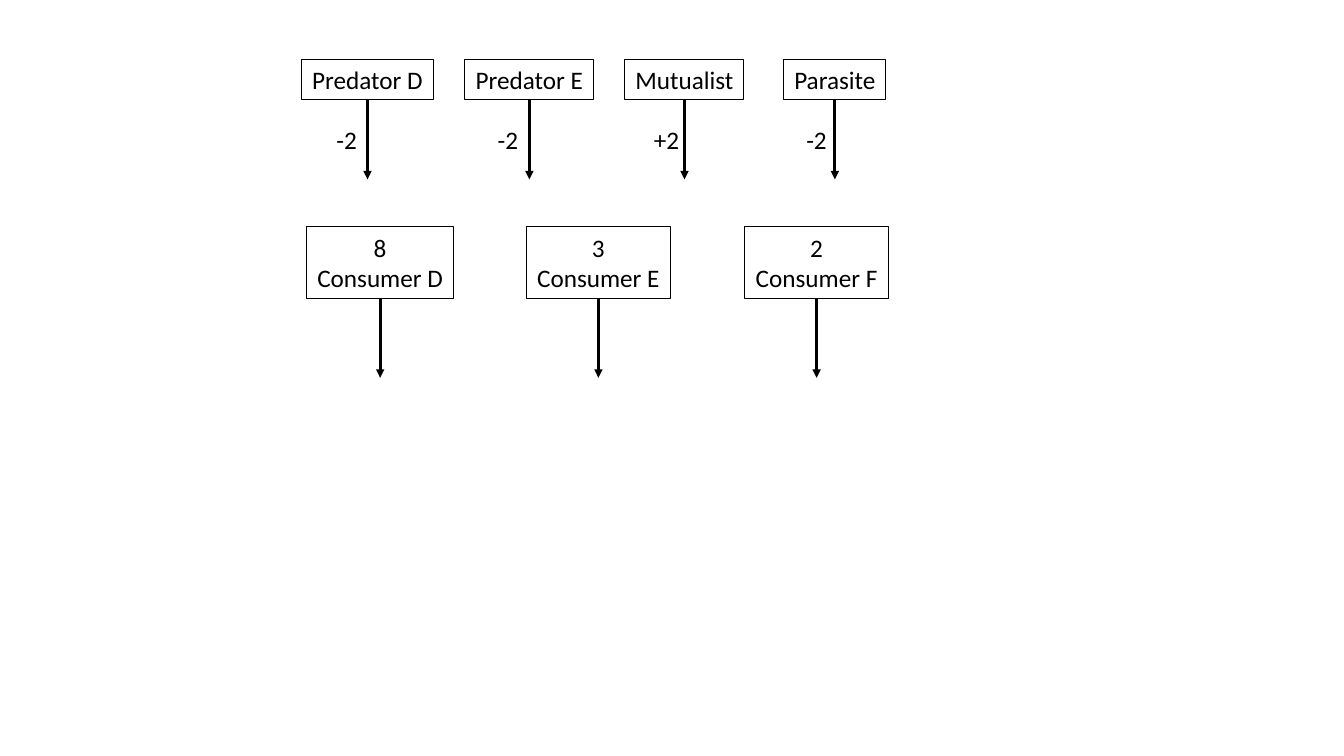
from pptx import Presentation, util as u
from pptx.dml.color import RGBColor
from pptx.enum import shapes, text
from pptx.oxml.ns import qn
from lxml import etree

COLORS = {"ink": "000000"}
CONSUMERS = [("D", 8, 3.71), ("E", 3, 3.63), ("F", 2, 3.61)]
INFLUENCES = [
    ("Predator D", 9.26, 3.33, "-2", 8.23, 1.04),
    ("Predator E", 13.34, 3.25, "-2", 12.29, 1.04),
    ("Mutualist", 17.25, 3.0, "+2", 16.23, 1.17),
    ("Parasite", 21.04, 2.57, "-2", 20.07, 1.04),
]


class FoodWeb:
    font = "Calibri"
    size = u.Pt(18)
    ink = RGBColor.from_string(COLORS["ink"])
    arrow_length = u.Cm(2)

    def __init__(self, slide):
        self.slide = slide

    def set_text(self, sp, lines, align):
        tf = sp.text_frame
        tf.word_wrap = False
        tf.auto_size = text.MSO_AUTO_SIZE.SHAPE_TO_FIT_TEXT
        tf.vertical_anchor = text.MSO_ANCHOR.TOP
        tf.text = "\n".join(lines)
        for p in tf.paragraphs:
            p.alignment = align
            p.font.name = self.font
            p.font.size = self.size
            p.font.color.rgb = self.ink

    def box(self, center, top, width, height, *lines):
        sp = self.slide.shapes.add_shape(
            shapes.MSO_SHAPE.RECTANGLE,
            u.Cm(center - width / 2), u.Cm(top), u.Cm(width), u.Cm(height))
        sp.shadow.inherit = False
        sp.fill.background()
        sp.line.color.rgb = self.ink
        sp.line.width = u.Pt(0.75)
        self.set_text(sp, lines, text.PP_ALIGN.CENTER)
        return sp

    def arrow_below(self, sp):
        x, y = sp.left + sp.width // 2, sp.top + sp.height
        arrow = self.slide.shapes.add_connector(
            shapes.MSO_CONNECTOR.STRAIGHT, x, y, x, y + self.arrow_length)
        arrow.begin_connect(sp, 2)
        arrow.line.color.rgb = self.ink
        arrow.line.width = u.Pt(2)
        props = arrow._element.spPr
        etree.SubElement(props.find(qn("a:ln")), qn("a:tailEnd"), type="triangle")
        etree.SubElement(props, qn("a:effectLst"))

    def label(self, left, top, width, height, wording):
        sp = self.slide.shapes.add_textbox(
            u.Cm(left), u.Cm(top), u.Cm(width), u.Cm(height))
        self.set_text(sp, [wording], text.PP_ALIGN.LEFT)


def main():
    prs = Presentation()
    prs.slide_width, prs.slide_height = u.Cm(33.87), u.Cm(19.05)
    web = FoodWeb(prs.slides.add_slide(prs.slide_layouts[6]))

    for i, (letter, count, width) in enumerate(CONSUMERS):
        sp = web.box(9.58 + 5.5 * i, 5.72, width, 1.8, str(count), f"Consumer {letter}")
        web.arrow_below(sp)

    for name, center, width, effect, left, label_width in INFLUENCES:
        sp = web.box(center, 1.5, width, 1.02, name)
        web.arrow_below(sp)
        web.label(left, 3, label_width, 1.02, effect)

    prs.save("out.pptx")


if __name__ == "__main__":
    main()
